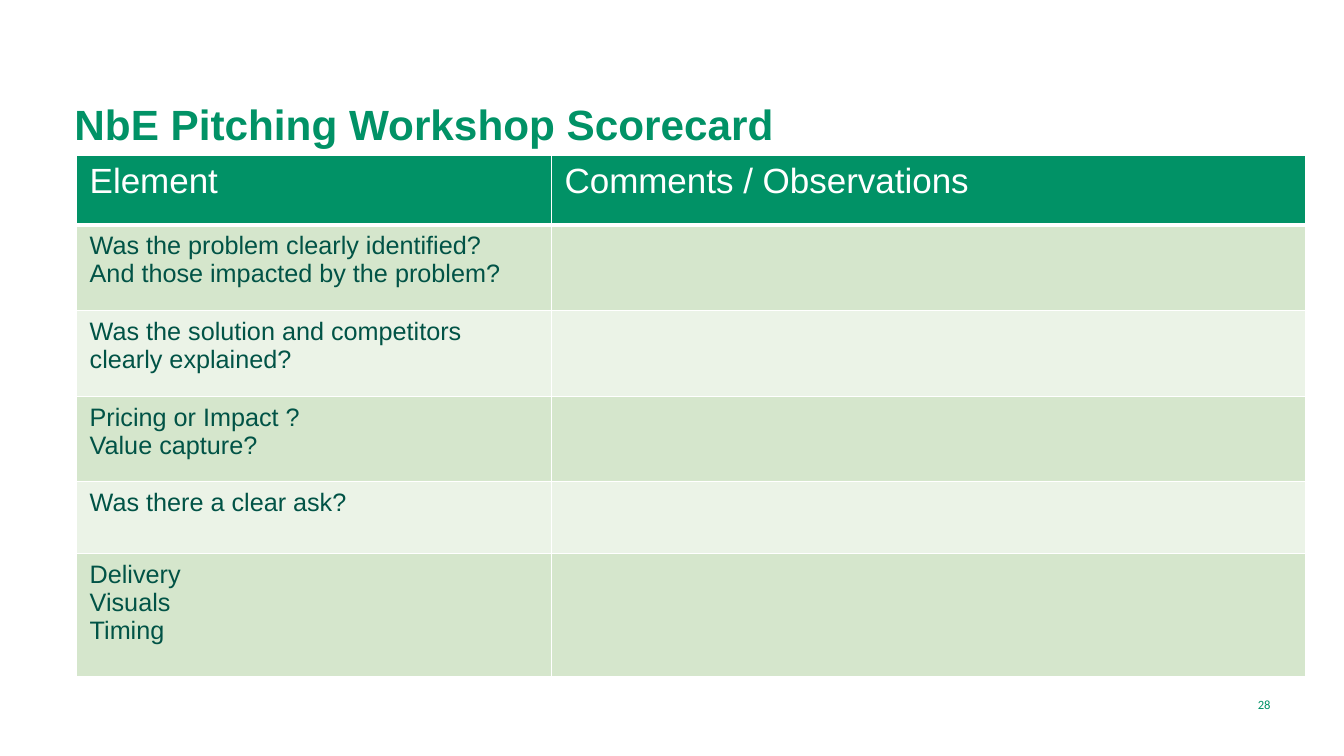
"""Build the pitching workshop scorecard slide."""
from lxml import etree
from pptx import Presentation
from pptx.dml.color import RGBColor
from pptx.enum.text import MSO_ANCHOR, PP_ALIGN
from pptx.oxml.ns import qn
from pptx.util import Pt

PX = 9144
BOTTOM, MIDDLE = MSO_ANCHOR.BOTTOM, MSO_ANCHOR.MIDDLE
LEFT, RIGHT = PP_ALIGN.LEFT, PP_ALIGN.RIGHT
GREEN, DARK_GREEN, WHITE = "019266", "015346", "FFFFFF"
BANDS = ["D5E6CC", "EBF3E7"]

COLUMN_WIDTHS = [471, 748]
ROWS = [
    (69, ["Element", "Comments / Observations"]),
    (85, ["Was the problem clearly identified?\nAnd those impacted by the problem?", ""]),
    (85, ["Was the solution and competitors clearly explained?", ""]),
    (85, ["Pricing or Impact ?\nValue capture?", ""]),
    (71, ["Was there a clear ask?", ""]),
    (122, ["Delivery\nVisuals\nTiming", ""]),
]


def color(value):
    return RGBColor.from_string(value)


def write_text(text_frame, text, font_color, alignment=LEFT, **font_format):
    text_frame.text = text
    text_frame.word_wrap = True
    for paragraph in text_frame.paragraphs:
        paragraph.alignment = alignment
        paragraph.font.color.rgb = color(font_color)
        for name, value in font_format.items():
            setattr(paragraph.font, name, value)


presentation = Presentation()
presentation.slide_width, presentation.slide_height = 1333 * PX, 750 * PX
slide = presentation.slides.add_slide(presentation.slide_layouts[6])

title = slide.shapes.add_textbox(64 * PX, 71 * PX, 1206 * PX, 82 * PX)
title.text_frame.vertical_anchor = BOTTOM
write_text(title.text_frame, "NbE Pitching Workshop Scorecard", GREEN,
           name="Arial", size=Pt(30.2), bold=True)

page_number = slide.shapes.add_textbox(1155 * PX, 679 * PX, 115 * PX, 40 * PX)
page_number.text_frame.vertical_anchor = MIDDLE
write_text(page_number.text_frame, "28", GREEN, RIGHT, name="Calibri", size=Pt(9))

table_height = sum(height for height, texts in ROWS)
scorecard = slide.shapes.add_table(
    len(ROWS), len(COLUMN_WIDTHS), 76 * PX, 154 * PX,
    sum(COLUMN_WIDTHS) * PX, table_height * PX).table
scorecard.first_row = scorecard.horz_banding = False
for column, width in zip(scorecard.columns, COLUMN_WIDTHS):
    column.width = width * PX

for row_index, (height, texts) in enumerate(ROWS):
    scorecard.rows[row_index].height = height * PX
    is_header = row_index == 0
    fill_color = GREEN if is_header else BANDS[(row_index - 1) % 2]
    font_color = WHITE if is_header else DARK_GREEN
    font_size = Pt(25 if is_header else 18)
    border_widths = {
        "a:lnL": 1, "a:lnR": 1,
        "a:lnT": 3 if row_index == 1 else 1,
        "a:lnB": 3 if is_header else 1,
    }
    for column_index, text in enumerate(texts):
        cell = scorecard.cell(row_index, column_index)
        cell.margin_left = cell.margin_right = 13 * PX
        cell.margin_top = cell.margin_bottom = 7 * PX
        write_text(cell.text_frame, text, font_color,
                   name="Arial", size=font_size, bold=False)
        properties = cell._tc.get_or_add_tcPr()
        for tag, width in border_widths.items():
            border = etree.SubElement(properties, qn(tag), w=str(Pt(width)))
            border_fill = etree.SubElement(border, qn("a:solidFill"))
            etree.SubElement(border_fill, qn("a:srgbClr"), val=WHITE)
        cell.fill.solid()
        cell.fill.fore_color.rgb = color(fill_color)

presentation.save("out.pptx")
